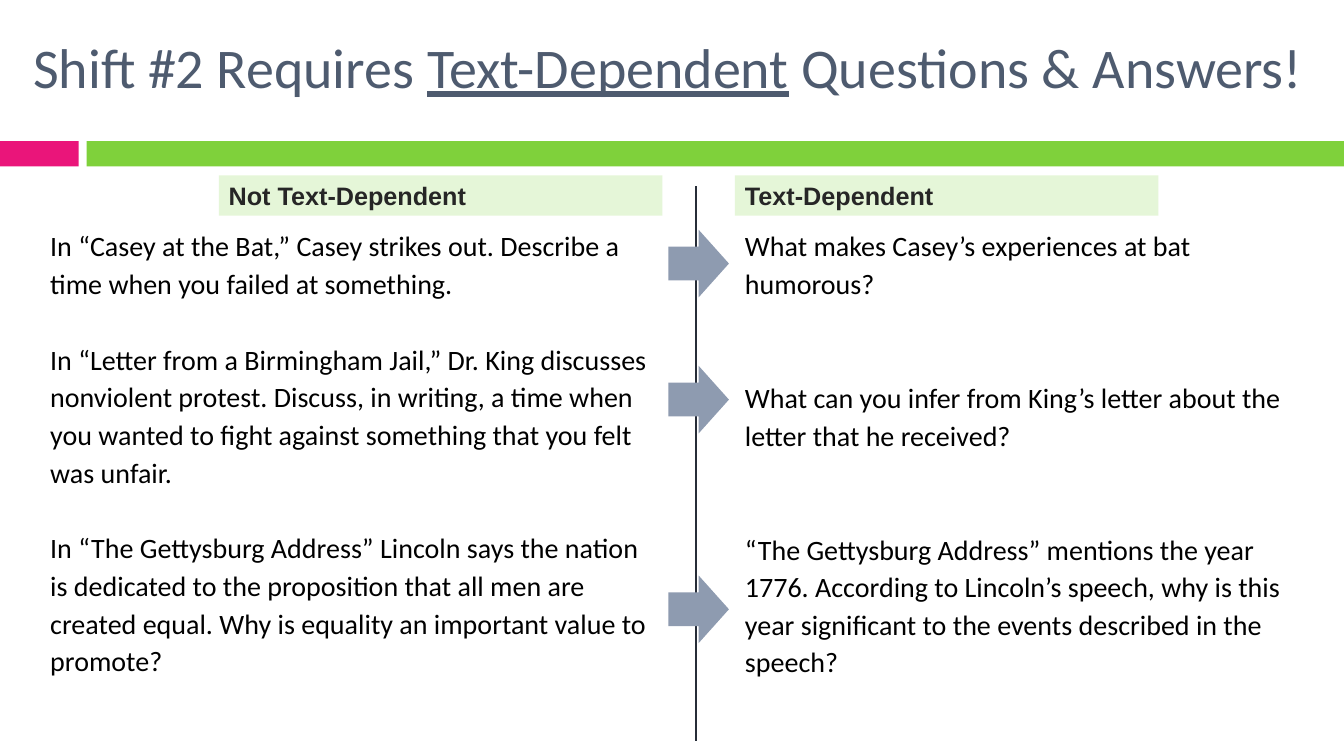
"""Build the slide on text-dependent questions."""
from lxml import etree
from pptx import Presentation
from pptx.dml.color import RGBColor
from pptx.enum.shapes import MSO_CONNECTOR, MSO_SHAPE
from pptx.enum.text import MSO_ANCHOR, PP_ALIGN
from pptx.oxml.ns import qn
from pptx.util import Inches, Pt

RECT = MSO_SHAPE.RECTANGLE
ARROW = MSO_SHAPE.RIGHT_ARROW
STRAIGHT = MSO_CONNECTOR.STRAIGHT
TOP, MIDDLE = MSO_ANCHOR.TOP, MSO_ANCHOR.MIDDLE
LEFT = PP_ALIGN.LEFT

COLORS = {
    "pink": "EA157A", "green": "7FD13B", "pale": "E5F6D8", "slate": "4E5B6F",
    "steel": "8E9BB0", "rule": "272D38", "dark": "262626", "black": "000000",
}
FONTS = {
    "title": ({"name": "Calibri", "size": Pt(40)}, "slate"),
    "body": ({"name": "Calibri", "size": Pt(20)}, "black"),
    "head": ({"name": "Arial", "size": Pt(18), "bold": True}, "dark"),
}
SPACING = 1.12
LINE = 27.3


class Deck:
    def __init__(self, slide):
        self.slide = slide

    def color(self, name):
        return RGBColor.from_string(COLORS[name])

    def run(self, para, text, style, **extra):
        run = para.add_run()
        run.text = text
        values, color = FONTS[style]
        for key, value in {**values, **extra}.items():
            setattr(run.font, key, value)
        run.font.color.rgb = self.color(color)

    def frame(self, shape, anchor):
        frame = shape.text_frame
        values = {
            "word_wrap": True, "vertical_anchor": anchor,
            "margin_left": Inches(0.1), "margin_right": Inches(0.1),
            "margin_top": Inches(0.05), "margin_bottom": Inches(0.05),
        }
        for key, value in values.items():
            setattr(frame, key, value)
        frame.paragraphs[0].alignment = LEFT
        return frame

    def shape(self, kind, box, fill):
        shape = self.slide.shapes.add_shape(kind, *map(Inches, box))
        shape.shadow.inherit = False
        shape.fill.solid()
        shape.fill.fore_color.rgb = self.color(fill)
        shape.line.fill.background()
        return shape

    def label(self, box, text):
        frame = self.frame(self.shape(RECT, box, "pale"), MIDDLE)
        self.run(frame.paragraphs[0], text, "head")

    def title(self, box, parts):
        frame = self.frame(self.slide.shapes.add_textbox(*map(Inches, box)), MIDDLE)
        for text, under in parts:
            self.run(frame.paragraphs[0], text, "title", underline=under)

    def body(self, box, texts, gap):
        frame = self.frame(self.slide.shapes.add_textbox(*map(Inches, box)), TOP)
        for i, text in enumerate(texts):
            para = frame.add_paragraph() if i else frame.paragraphs[0]
            values = {
                "alignment": LEFT, "line_spacing": SPACING,
                "space_before": Pt(gap * LINE if i else 0),
            }
            for key, value in values.items():
                setattr(para, key, value)
            self.run(para, text, "body")

    def rule(self, x, top, end):
        ends = map(Inches, (x, top, x, end))
        line = self.slide.shapes.add_connector(STRAIGHT, *ends)
        line.line.color.rgb = self.color("rule")
        line.line.width = Pt(1.5)
        etree.SubElement(line._element.spPr, qn("a:effectLst"))


COLUMNS = [
    (0.4, 6.17, 2.17, 4.4, "Not Text-Dependent", 1, [
        "In “Casey at the Bat,” Casey strikes out. Describe a time when you "
        "failed at something.",
        "In “Letter from a Birmingham Jail,” Dr. King discusses nonviolent "
        "protest. Discuss, in writing, a time when you wanted to fight against "
        "something that you felt was unfair.",
        "In “The Gettysburg Address” Lincoln says the nation is dedicated to "
        "the proposition that all men are created equal. Why is equality an "
        "important value to promote?",
    ]),
    (7.29, 5.75, 7.29, 4.2, "Text-Dependent", 2, [
        "What makes Casey’s experiences at bat humorous?",
        "What can you infer from King’s letter about the letter that he "
        "received?",
        "“The Gettysburg Address” mentions the year 1776. According to "
        "Lincoln’s speech, why is this year significant to the events "
        "described in the speech?",
    ]),
]


def main():
    prs = Presentation()
    prs.slide_width, prs.slide_height = Inches(13.33), Inches(7.5)
    deck = Deck(prs.slides.add_slide(prs.slide_layouts[6]))
    deck.shape(RECT, (0, 1.4, 0.78, 0.25), "pink")
    deck.shape(RECT, (0.86, 1.4, 12.47, 0.25), "green")
    deck.title((0.23, 0.27, 13.1, 0.77), [
        ("Shift #2 Requires ", False),
        ("Text-Dependent", True),
        (" Questions & Answers!", False),
    ])
    deck.rule(6.9, 1.85, 7.35)
    for top in (2.28, 3.63, 5.71):
        deck.shape(ARROW, (6.63, top, 0.6, 0.67), "steel")
    for left, width, start, span, head, gap, texts in COLUMNS:
        deck.body((left, 2.18, width, 4.71), texts, gap)
        deck.label((start, 1.74, span, 0.4), head)
    prs.save("out.pptx")


if __name__ == "__main__":
    main()
